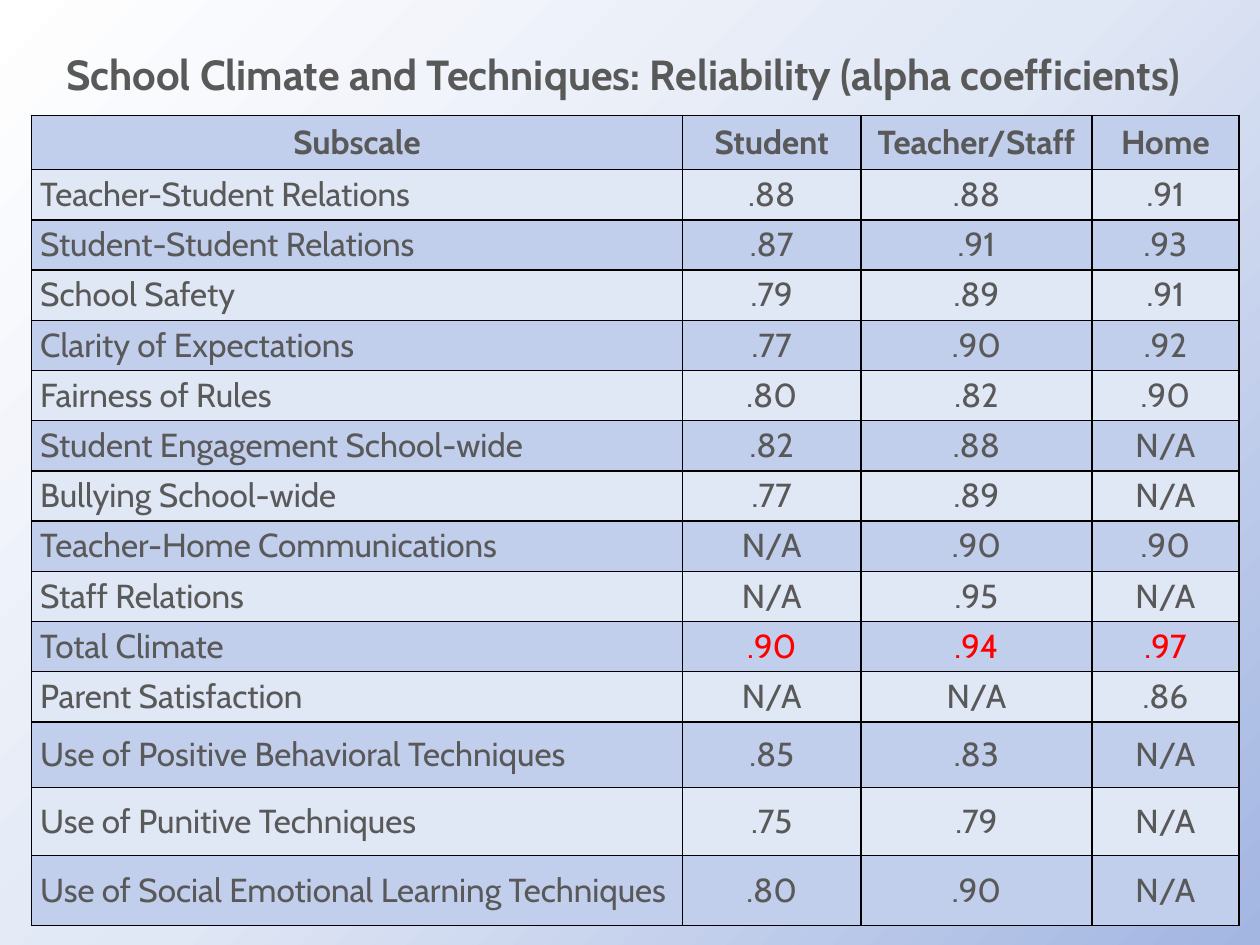
"""Build the slide of reliability coefficients for the school climate scales."""
from dataclasses import dataclass

from lxml.etree import SubElement
from pptx import Presentation
from pptx.dml.color import RGBColor as RGB
from pptx.enum.text import MSO_ANCHOR as Anchor, MSO_AUTO_SIZE as AutoSize, PP_ALIGN as Align
from pptx.oxml.ns import qn
from pptx.util import Pt


@dataclass(frozen=True)
class Theme:
    font: str = "Cabin"
    title_size: int = 24
    table_size: int = 19
    text: str = "595959"
    total: str = "FF0000"
    border: str = "000000"
    bands: tuple = ("C1CEEC", "E0E7F5")
    backdrop: tuple = ((0, "A3B6E2"), (50, "E0E7F5"), (100, "FFFFFF"))


theme = Theme()


def style_text(paragraph, size, color, bold, align):
    paragraph.alignment = align
    paragraph.font.name = theme.font
    paragraph.font.size = Pt(size)
    paragraph.font.bold = bold
    paragraph.font.color.rgb = RGB.from_string(color)


def draw_borders(cell):
    properties = cell._tc.get_or_add_tcPr()
    for side in ("lnL", "lnR", "lnT", "lnB"):
        line = SubElement(properties, qn(f"a:{side}"), w=str(Pt(1)))
        SubElement(SubElement(line, qn("a:solidFill")), qn("a:srgbClr"), val=theme.border)


reliability = [
    ("Subscale", "Student", "Teacher/Staff", "Home"),
    ("Teacher-Student Relations", ".88", ".88", ".91"),
    ("Student-Student Relations", ".87", ".91", ".93"),
    ("School Safety", ".79", ".89", ".91"),
    ("Clarity of Expectations", ".77", ".90", ".92"),
    ("Fairness of Rules", ".80", ".82", ".90"),
    ("Student Engagement School-wide", ".82", ".88", "N/A"),
    ("Bullying School-wide", ".77", ".89", "N/A"),
    ("Teacher-Home Communications", "N/A", ".90", ".90"),
    ("Staff Relations", "N/A", ".95", "N/A"),
    ("Total Climate", ".90", ".94", ".97"),
    ("Parent Satisfaction", "N/A", "N/A", ".86"),
    ("Use of Positive Behavioral Techniques", ".85", ".83", "N/A"),
    ("Use of Punitive Techniques", ".75", ".79", "N/A"),
    ("Use of Social Emotional Learning Techniques", ".80", ".90", "N/A"),
]
column_widths = [372, 102, 132, 84]
row_heights = [31] + [28.7] * 11 + [37.5, 39, 40]

deck = Presentation()
deck.slide_width, deck.slide_height = Pt(720), Pt(540)
slide = deck.slides.add_slide(deck.slide_layouts[5])

slide.background.fill.solid()
backdrop = slide.background._cSld.find(f"{qn('p:bg')}/{qn('p:bgPr')}")
backdrop.remove(backdrop[0])
gradient = SubElement(backdrop, qn("a:gradFill"), rotWithShape="1")
backdrop.insert(0, gradient)
stops = SubElement(gradient, qn("a:gsLst"))
for position, color in theme.backdrop:
    stop = SubElement(stops, qn("a:gs"), pos=str(position * 1000))
    SubElement(stop, qn("a:srgbClr"), val=color)
spread = SubElement(gradient, qn("a:path"), path="circle")
SubElement(spread, qn("a:fillToRect"), l="100000", t="100000")

title = slide.shapes.title
title.left, title.top, title.width, title.height = Pt(11), Pt(-18), Pt(690), Pt(90)
heading = title.text_frame
heading.text = "School Climate and Techniques: Reliability (alpha coefficients)"
heading.auto_size = AutoSize.NONE
heading.word_wrap = True
heading.vertical_anchor = Anchor.MIDDLE
heading.margin_top = Pt(34)
style_text(heading.paragraphs[0], theme.title_size, theme.text, True, Align.CENTER)

coefficients = slide.shapes.add_table(
    len(reliability), len(column_widths), Pt(18), Pt(66), Pt(sum(column_widths)), Pt(sum(row_heights))
).table
for column, width in zip(coefficients.columns, column_widths):
    column.width = Pt(width)
for row, height in zip(coefficients.rows, row_heights):
    row.height = Pt(height)

for row_index, entries in enumerate(reliability):
    is_header = row_index == 0
    for column_index, entry in enumerate(entries):
        is_label = column_index == 0
        is_total = entries[0] == "Total Climate" and not is_label
        cell = coefficients.cell(row_index, column_index)
        cell.text = entry
        cell.vertical_anchor = Anchor.MIDDLE
        cell.margin_left = cell.margin_right = Pt(5)
        cell.margin_top = cell.margin_bottom = 0
        draw_borders(cell)
        cell.fill.solid()
        cell.fill.fore_color.rgb = RGB.from_string(theme.bands[row_index % 2])
        style_text(
            cell.text_frame.paragraphs[0],
            theme.table_size,
            theme.total if is_total else theme.text,
            is_header,
            Align.LEFT if is_label and not is_header else Align.CENTER,
        )

deck.save("out.pptx")
